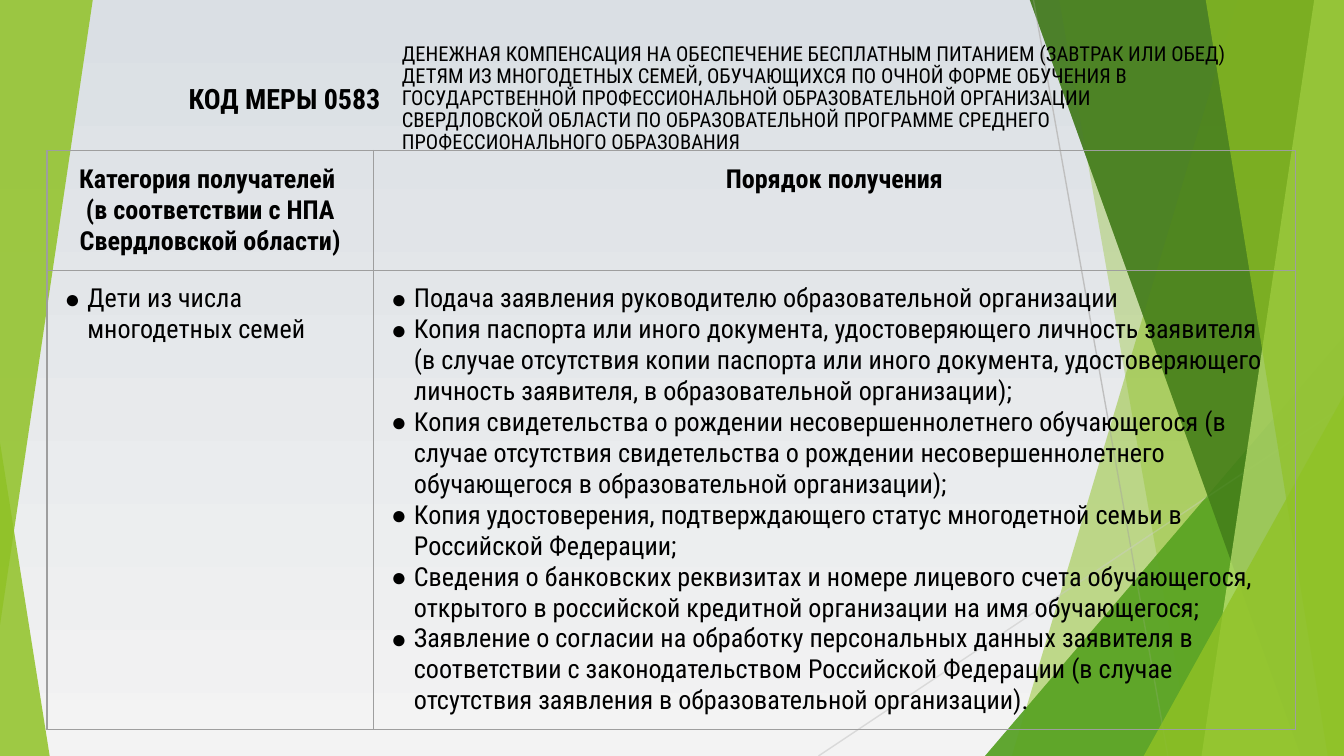
from lxml import etree
from pptx import Presentation
from pptx.dml.color import RGBColor
from pptx.enum.shapes import MSO_CONNECTOR, MSO_SHAPE
from pptx.enum.text import MSO_ANCHOR, PP_ALIGN
from pptx.oxml.ns import qn
from pptx.util import Inches, Pt

STRAIGHT = MSO_CONNECTOR.STRAIGHT
TRIANGLE = MSO_SHAPE.ISOSCELES_TRIANGLE
LEFT, CENTER, RIGHT = PP_ALIGN.LEFT, PP_ALIGN.CENTER, PP_ALIGN.RIGHT
MIDDLE = MSO_ANCHOR.MIDDLE

FONT, BULLET_FONT = "Roboto Condensed", "Arial"
BLACK = RGBColor(0x00, 0x00, 0x00)
SKY, MIST = RGBColor(0xDA, 0xDF, 0xE4), RGBColor(0xF3, 0xF3, 0xF3)
LIME, GREEN = RGBColor(0x90, 0xC2, 0x26), RGBColor(0x54, 0xA0, 0x21)
FOREST, PALE = RGBColor(0x3F, 0x78, 0x19), RGBColor(0xC0, 0xE4, 0x74)
GREY, LIGHT_GREY = RGBColor(0xBF, 0xBF, 0xBF), RGBColor(0xD9, 0xD9, 0xD9)
BORDER = RGBColor(0x9E, 0x9E, 0x9E)

WIDTH, HEIGHT, TOP = 10, 10 * 9 / 16, -0.01

# Content
CODE = "КОД МЕРЫ 0583"
MEASURE = (
    "ДЕНЕЖНАЯ КОМПЕНСАЦИЯ НА ОБЕСПЕЧЕНИЕ БЕСПЛАТНЫМ ПИТАНИЕМ (ЗАВТРАК ИЛИ ОБЕД) "
    "ДЕТЯМ ИЗ МНОГОДЕТНЫХ СЕМЕЙ, ОБУЧАЮЩИХСЯ ПО ОЧНОЙ ФОРМЕ ОБУЧЕНИЯ В "
    "ГОСУДАРСТВЕННОЙ ПРОФЕССИОНАЛЬНОЙ ОБРАЗОВАТЕЛЬНОЙ ОРГАНИЗАЦИИ СВЕРДЛОВСКОЙ "
    "ОБЛАСТИ ПО ОБРАЗОВАТЕЛЬНОЙ ПРОГРАММЕ СРЕДНЕГО ПРОФЕССИОНАЛЬНОГО ОБРАЗОВАНИЯ"
)
HEADERS = [
    "Категория получателей \v(в соответствии с НПА Свердловской области)",
    "Порядок получения",
]
RECIPIENTS = ["Дети из числа многодетных семей"]
STEPS = [
    "Подача заявления руководителю образовательной организации",
    "Копия паспорта или иного документа, удостоверяющего личность заявителя "
    "(в случае отсутствия копии паспорта или иного документа, удостоверяющего "
    "личность заявителя, в образовательной организации);",
    "Копия свидетельства о рождении несовершеннолетнего обучающегося (в случае "
    "отсутствия свидетельства о рождении несовершеннолетнего обучающегося в "
    "образовательной организации);",
    "Копия удостоверения, подтверждающего статус многодетной семьи в Российской Федерации;",
    "Сведения о банковских реквизитах и номере лицевого счета обучающегося, "
    "открытого в российской кредитной организации на имя обучающегося;",
    "Заявление о согласии на обработку персональных данных заявителя в соответствии "
    "с законодательством Российской Федерации (в случае отсутствия заявления в "
    "образовательной организации).",
]
COLUMNS, ROWS = [2.43, 6.86], [0.89, 3.41]

# Right-hand facets: a band is (top x, bottom x), a corner is (left, top)
FACETS = [
    ("band", (9.21, 7.53), LIME, 30),
    ("band", (7.88, 8.87), LIME, 20),
    ("corner", (7.33, 2.5), GREEN, 72),
    ("band", (7.66, 9.68), FOREST, 70),
    ("band", (9.78, 8.94), PALE, 70),
    ("band", (8.97, 9.88), LIME, 65),
    ("corner", (8.51, 2.94), LIME, 80),
]
RAYS = [((7.69, 0), (8.69, HEIGHT), GREY), ((WIDTH, 3.02), (6.09, HEIGHT), LIGHT_GREY)]


def paint(shape, color, opacity):
    shape.shadow.inherit = False
    shape.line.fill.background()
    shape.fill.solid()
    shape.fill.fore_color.rgb = color
    tint = shape._element.spPr.find(qn("a:solidFill")).find(qn("a:srgbClr"))
    etree.SubElement(tint, qn("a:alpha"), val=str(opacity * 1000))


def add_triangle(left, top, width, height, apex, color, opacity, rotation=0):
    shape = page.shapes.add_shape(
        TRIANGLE, Inches(left), Inches(top), Inches(width), Inches(height))
    shape.adjustments[0] = apex
    shape.rotation = rotation
    paint(shape, color, opacity)


def add_facets():
    for kind, (first, second), color, opacity in FACETS:
        if kind == "corner":
            add_triangle(first, second, WIDTH - first, HEIGHT - second, 1, color, opacity)
            continue
        corners = [(first, TOP), (WIDTH, TOP), (WIDTH, HEIGHT), (second, HEIGHT)]
        start, *others = [(Inches(x), Inches(y)) for x, y in corners]
        builder = page.shapes.build_freeform(*start)
        builder.add_line_segments(others)
        paint(builder.convert_to_shape(), color, opacity)


def add_ray(start, end, color):
    ray = page.shapes.add_connector(STRAIGHT, *map(Inches, start + end))
    ray.line.color.rgb = color
    ray.line.width = Pt(0.75)
    etree.SubElement(ray._element.spPr, qn("a:effectLst"))


def write(frame, texts, size, bold=False, align=LEFT, bullet=False):
    frame.text = "\n".join(texts)
    frame.word_wrap = True
    for para in frame.paragraphs:
        para.alignment = align
        for span in para.runs:
            span.font.name = FONT
            span.font.size = Pt(size)
            span.font.bold = bold
            span.font.color.rgb = BLACK
        if bullet:
            props = para._p.get_or_add_pPr()
            props.set("marL", str(Inches(0.2)))
            props.set("indent", str(Inches(-0.17)))
            mark_color = etree.SubElement(props, qn("a:buClr"))
            etree.SubElement(mark_color, qn("a:srgbClr"), val=str(BLACK))
            etree.SubElement(props, qn("a:buFont"), typeface=BULLET_FONT)
            etree.SubElement(props, qn("a:buChar"), char="●")


def set_margins(target, side, end):
    target.margin_left = target.margin_right = Inches(side)
    target.margin_top = target.margin_bottom = Inches(end)


def add_heading(left, width, margins, text, size, **style):
    box = page.shapes.add_textbox(Inches(left), Inches(0.35), Inches(width), Inches(0.77))
    frame = box.text_frame
    set_margins(frame, *margins)
    frame.vertical_anchor = MIDDLE
    write(frame, [text], size, **style)
    return frame


def style_cell(cell):
    set_margins(cell, 0.1, 0.1)
    props = cell._tc.get_or_add_tcPr()
    for side in ("lnL", "lnR", "lnT", "lnB"):
        line = etree.SubElement(props, qn("a:" + side), w=str(Pt(0.75)))
        fill = etree.SubElement(line, qn("a:solidFill"))
        etree.SubElement(fill, qn("a:srgbClr"), val=str(BORDER))
    cell.fill.background()


deck = Presentation()
deck.slide_width, deck.slide_height = Inches(WIDTH), Inches(HEIGHT)
page = deck.slides.add_slide(deck.slide_layouts[6])

# Background
backdrop = page.background.fill
backdrop.gradient()
backdrop.gradient_angle = 270
for stop, color in zip(backdrop.gradient_stops, (SKY, MIST)):
    stop.color.rgb = color

# Green facets in two layers, with the rays between them
add_facets()
add_triangle(0, 3.29, 0.37, HEIGHT - 3.29, 0, LIME, 85)
for ray in RAYS:
    add_ray(*ray)
add_facets()
add_triangle(0, 0, 0.69, 4.65, 1, LIME, 85, rotation=180)

# Table
table = page.shapes.add_table(
    2, 2, Inches(0.35), Inches(1.12), Inches(sum(COLUMNS)), Inches(sum(ROWS))).table
table.first_row = table.horz_banding = False
for column, width in zip(table.columns, COLUMNS):
    column.width = Inches(width)
for row, height in zip(table.rows, ROWS):
    row.height = Inches(height)
for index, (header, items) in enumerate(zip(HEADERS, (RECIPIENTS, STEPS))):
    write(table.cell(0, index).text_frame, [header], 14, bold=True, align=CENTER)
    write(table.cell(1, index).text_frame, items, 14, bullet=True)
for cell in table.iter_cells():
    style_cell(cell)

# Headings
add_heading(0.82, 2.11, (0.1, 0.1), CODE, 15, bold=True, align=RIGHT)
measure = add_heading(2.92, 6.3, (0.07, 0.04), MEASURE, 11)
measure.paragraphs[0].line_spacing = 0.9

deck.save("out.pptx")
